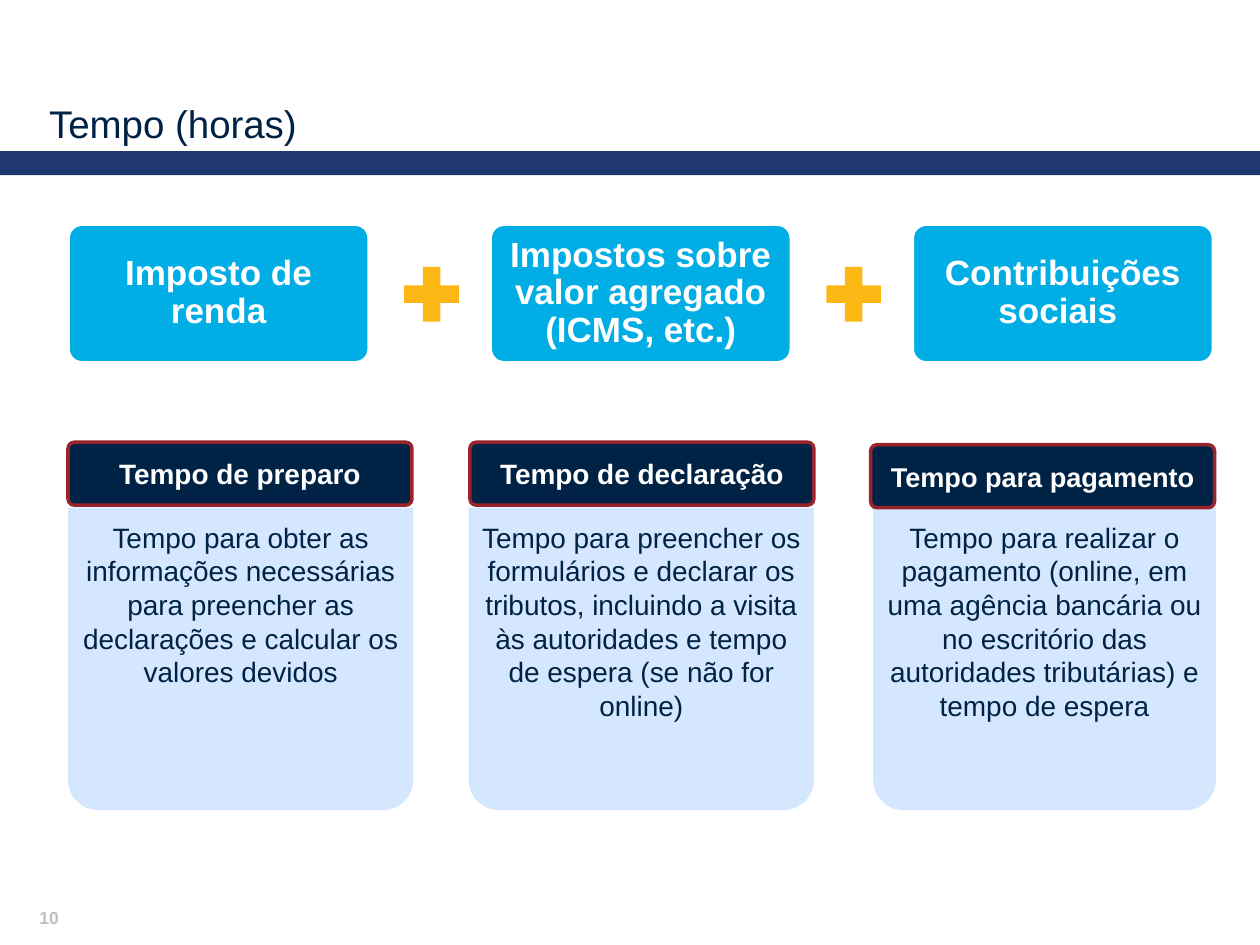
"""Build the slide on the time it takes to pay taxes."""
from pptx import Presentation
from pptx.dml.color import RGBColor
from pptx.enum.shapes import MSO_SHAPE
from pptx.enum.text import MSO_ANCHOR, PP_ALIGN
from pptx.util import Inches, Pt

HUES = {"navy": "002345", "band": "1F396F", "pale": "D4E7FE", "sky": "00ADE4",
        "gold": "FDB714", "red": "98252B", "white": "FFFFFF", "gray": "BFBFBF"}


def shade(kind, place, fill, line=None, adjust=()):
    shape = slide.shapes.add_shape(kind, *map(Inches, place))
    shape.shadow.inherit = False
    shape.fill.solid()
    shape.fill.fore_color.rgb = RGBColor.from_string(HUES[fill])
    if line:
        shape.line.color.rgb = RGBColor.from_string(HUES[line])
        shape.line.width = Pt(2)
    else:
        shape.line.fill.background()
    for spot, value in enumerate(adjust):
        shape.adjustments[spot] = value
    return shape


def write(shape, text, size, hue, bold=False, inset=(0, 0),
          anchor=MSO_ANCHOR.MIDDLE, align=PP_ALIGN.CENTER, space=1.0):
    frame = shape.text_frame
    frame.text = text
    side, edge = map(Inches, inset)
    look = {"word_wrap": True, "vertical_anchor": anchor, "margin_left": side,
            "margin_right": side, "margin_top": edge, "margin_bottom": edge}
    for name, value in look.items():
        setattr(frame, name, value)
    para = frame.paragraphs[0]
    para.alignment = align
    para.line_spacing = space
    for name, value in {"name": "Arial", "size": Pt(size), "bold": bold}.items():
        setattr(para.font, name, value)
    para.font.color.rgb = RGBColor.from_string(HUES[hue])


deck = Presentation()
deck.slide_width, deck.slide_height = Inches(10), Inches(7.5)
slide = deck.slides.add_slide(deck.slide_layouts[5])

shade(MSO_SHAPE.RECTANGLE, (0, 1.2, 10, 0.19), "band")
title = slide.shapes.title
spot = {"left": 0.39, "top": 0.33, "width": 9.25, "height": 0.83}
for name, value in spot.items():
    setattr(title, name, Inches(value))
write(title, "Tempo (horas)", 22, "navy", anchor=MSO_ANCHOR.BOTTOM, align=PP_ALIGN.LEFT)

steps = [
    (0.54, 2.74, "Tempo para obter as informações necessárias para preencher as "
     "declarações e calcular os valores devidos"),
    (3.72, 2.74, "Tempo para preencher os formulários e declarar os tributos, incluindo "
     "a visita às autoridades e tempo de espera (se não for online)"),
    (6.93, 2.72, "Tempo para realizar o pagamento (online, em uma agência bancária ou "
     "no escritório das autoridades tributárias) e tempo de espera"),
]
for left, width, text in steps:
    panel = shade(MSO_SHAPE.ROUND_2_SAME_RECTANGLE, (left, 4.03, width, 2.4), "pale",
                  adjust=(0, 0.1))
    write(panel, text, 16, "navy", inset=(0.03, 0.1), anchor=MSO_ANCHOR.TOP)

heads = [(0.54, 3.51, 16, "Tempo de preparo"),
         (3.73, 3.51, 16, "Tempo de declaração"),
         (6.91, 3.53, 15.5, "Tempo para pagamento")]
for left, top, size, text in heads:
    head = shade(MSO_SHAPE.ROUNDED_RECTANGLE, (left, top, 2.73, 0.5), "navy", "red", (0.1,))
    write(head, text, size, "white", True, (0.1, 0.05))

taxes = ["Imposto de renda", "Impostos sobre valor agregado (ICMS, etc.)",
         "Contribuições sociais "]
for rank, text in enumerate(taxes):
    left = 0.54 + 3.35 * rank
    card = shade(MSO_SHAPE.ROUNDED_RECTANGLE, (left, 1.78, 2.39, 1.1), "sky", "white", (0.1,))
    write(card, text, 20, "white", True, (0.08, 0.08), space=0.9)
    if rank:
        shade(MSO_SHAPE.MATH_PLUS, (left - 0.76, 2.04, 0.59, 0.59), "gold")

page = slide.shapes.add_textbox(*map(Inches, (0.09, 7.09, 0.6, 0.39)))
write(page, "10", 10, "gray", True)

deck.save("out.pptx")
